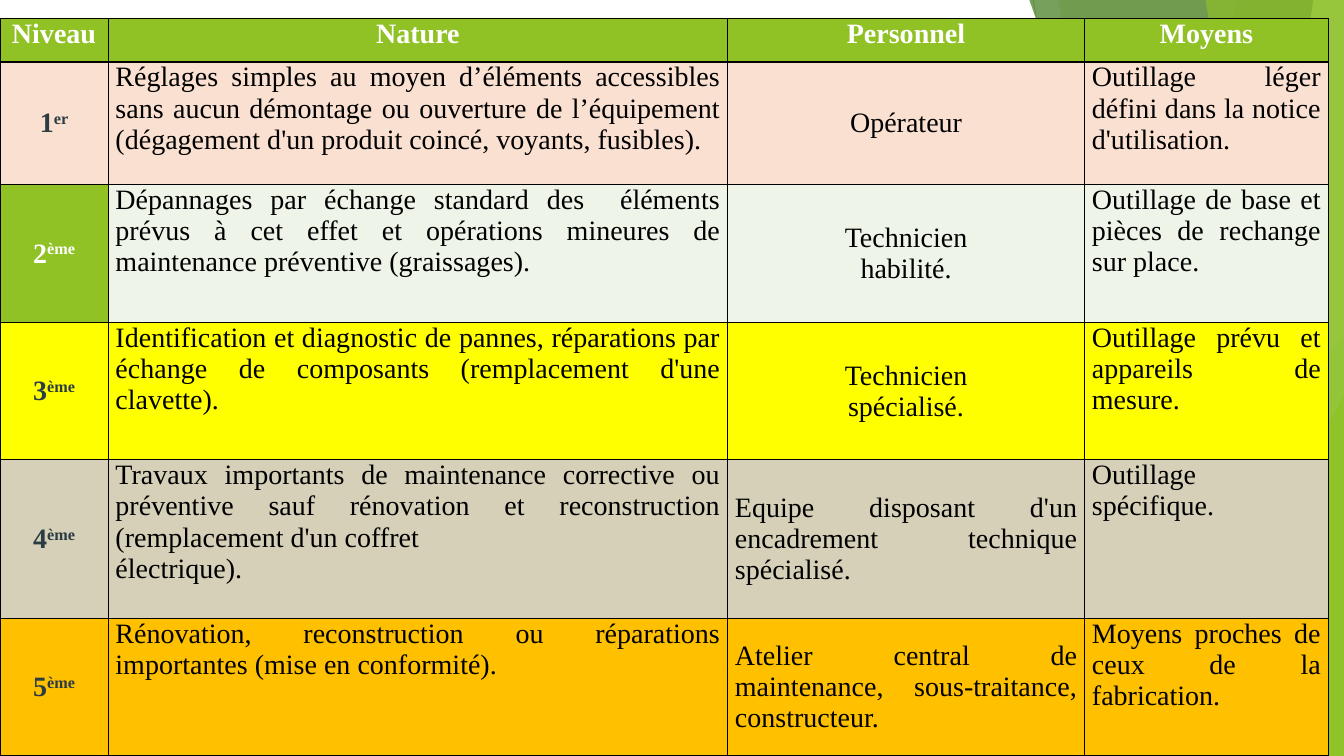
from lxml import etree
from pptx import Presentation, util as u
from pptx.dml.color import RGBColor
from pptx.enum import shapes, text
from pptx.oxml import ns

PX = 9525
WIDTH, HEIGHT = 1280, 720
FONT = "Times New Roman"
GREEN, WHITE, BLACK, SLATE = "90C226", "FFFFFF", "000000", "2C3C43"
CENTER, JUSTIFY = text.PP_ALIGN.CENTER, text.PP_ALIGN.JUSTIFY

COLUMN_WIDTHS = [103, 590, 340, 232]
ROW_HEIGHTS = [41, 117, 131, 131, 151, 131]
HEADINGS = ["Niveau", "Nature", "Personnel", "Moyens"]

# ordinal suffix, level colour, level fill, row fill, staff alignment, nature, staff, means
LEVELS = [
    ("er", SLATE, "FAE0D1", "FAE0D1", CENTER,
     "Réglages simples au moyen d’éléments accessibles sans aucun démontage ou ouverture "
     "de l’équipement (dégagement d'un produit coincé, voyants, fusibles).",
     "Opérateur",
     "Outillage léger défini dans la notice d'utilisation."),
    ("ème", WHITE, GREEN, "EEF4E8", CENTER,
     "Dépannages par échange standard des  éléments prévus à cet effet et opérations "
     "mineures de maintenance préventive (graissages).",
     "Technicien\nhabilité.",
     "Outillage de base et pièces de rechange sur place."),
    ("ème", SLATE, "FFFF00", "FFFF00", CENTER,
     "Identification et diagnostic de pannes, réparations par échange de composants "
     "(remplacement d'une clavette).",
     "Technicien\nspécialisé.",
     "Outillage prévu et appareils de mesure."),
    ("ème", SLATE, "D6D0B8", "D6D0B8", JUSTIFY,
     "Travaux importants de maintenance corrective ou préventive sauf rénovation et "
     "reconstruction (remplacement d'un coffret\nélectrique).",
     "Equipe disposant d'un encadrement technique spécialisé.",
     "Outillage\nspécifique."),
    ("ème", SLATE, "FFC000", "FFC000", JUSTIFY,
     "Rénovation, reconstruction ou réparations importantes (mise en conformité).",
     "Atelier central de maintenance, sous-traitance, constructeur.",
     "Moyens proches de ceux de la fabrication."),
]


def px(length):
    return u.Emu(length * PX)


def rgb(hex_color):
    return RGBColor.from_string(hex_color)


def paint(shape, color, opacity):
    """Give a shape a see-through fill without outline or shadow."""
    shape.shadow.inherit = False
    shape.line.fill.background()
    shape.fill.solid()
    shape.fill.fore_color.rgb = rgb(color)
    srgb = shape.fill._xPr.find(".//" + ns.qn("a:srgbClr"))
    etree.SubElement(srgb, ns.qn("a:alpha"), val=str(opacity * 1000))


def add_ray(slide, start, end, color):
    ray = slide.shapes.add_connector(
        shapes.MSO_CONNECTOR.STRAIGHT, *(px(v) for v in start + end))
    ray.line.color.rgb = rgb(color)
    ray.line.width = u.Pt(0.75)
    etree.SubElement(ray._element.spPr, ns.qn("a:effectLst"))


def add_band(slide, top_x, bottom_x, color, opacity):
    """Fill the area between a slanted edge and the right side of the slide."""
    builder = slide.shapes.build_freeform(px(top_x), px(-1))
    builder.add_line_segments([(px(x), px(y)) for x, y in (
        (WIDTH, -1), (WIDTH, HEIGHT), (bottom_x, HEIGHT))], close=True)
    paint(builder.convert_to_shape(), color, opacity)


def add_corner(slide, left, width, height, apex, color, opacity):
    """Stand a triangle on the bottom edge of the slide."""
    corner = slide.shapes.add_shape(
        shapes.MSO_SHAPE.ISOSCELES_TRIANGLE,
        px(left), px(HEIGHT - height), px(width), px(height))
    corner.adjustments[0] = apex
    paint(corner, color, opacity)


def add_decor(slide):
    add_ray(slide, (984, 0), (1112, HEIGHT), "BFBFBF")
    add_ray(slide, (WIDTH, 387), (780, HEIGHT), "D9D9D9")
    add_band(slide, 1179, 964, GREEN, 30)
    add_band(slide, 1008, 1136, GREEN, 20)
    add_corner(slide, 938, 342, 400, 1, "54A021", 72)
    add_band(slide, 980, 1239, "3F7819", 70)
    add_band(slide, 1251, 1144, "C0E474", 70)
    add_band(slide, 1148, 1265, GREEN, 65)
    add_corner(slide, 1089, 191, 343, 1, GREEN, 80)
    add_corner(slide, 0, 47, 299, 0, GREEN, 85)


def add_borders(cell):
    properties = cell._tc.get_or_add_tcPr()
    for side in ("lnL", "lnR", "lnT", "lnB"):
        border = etree.SubElement(properties, ns.qn("a:" + side), w=str(u.Pt(1)))
        fill = etree.SubElement(border, ns.qn("a:solidFill"))
        etree.SubElement(fill, ns.qn("a:srgbClr"), val=BLACK)


def fill_cell(cell, content, fill, align, color=BLACK, bold=False, middle=False):
    add_borders(cell)
    cell.fill.solid()
    cell.fill.fore_color.rgb = rgb(fill)
    cell.margin_left = cell.margin_right = px(7)
    cell.margin_top = cell.margin_bottom = 0
    cell.vertical_anchor = text.MSO_ANCHOR.MIDDLE if middle else text.MSO_ANCHOR.TOP
    cell.text_frame.text = content
    for paragraph in cell.text_frame.paragraphs:
        paragraph.alignment = align
        for run in paragraph.runs:
            format_run(run, color, bold)


def format_run(run, color, bold):
    run.font.name = FONT
    run.font.size = u.Pt(20)
    run.font.bold = bold
    run.font.color.rgb = rgb(color)


def add_ordinal(cell, suffix, color):
    """Append a raised ordinal ending to the level number."""
    ending = cell.text_frame.paragraphs[0].add_run()
    ending.text = suffix
    format_run(ending, color, True)
    ending._r.get_or_add_rPr().set("baseline", "30000")


def add_levels_table(slide):
    levels = slide.shapes.add_table(
        len(ROW_HEIGHTS), len(COLUMN_WIDTHS), 0, px(18),
        px(sum(COLUMN_WIDTHS)), px(sum(ROW_HEIGHTS))).table
    levels.horz_banding = False
    for column, width in zip(levels.columns, COLUMN_WIDTHS):
        column.width = px(width)
    for row, height in zip(levels.rows, ROW_HEIGHTS):
        row.height = px(height)

    for cell, heading in zip(levels.rows[0].cells, HEADINGS):
        fill_cell(cell, heading, GREEN, CENTER, WHITE, bold=True)
    for number, level in enumerate(LEVELS, 1):
        suffix, color, level_fill, row_fill, staff_align, nature, staff, means = level
        level_cell, nature_cell, staff_cell, means_cell = levels.rows[number].cells
        fill_cell(level_cell, str(number), level_fill, CENTER, color, bold=True, middle=True)
        add_ordinal(level_cell, suffix, color)
        fill_cell(nature_cell, nature, row_fill, JUSTIFY)
        fill_cell(staff_cell, staff, row_fill, staff_align, middle=True)
        fill_cell(means_cell, means, row_fill, JUSTIFY)


def main():
    deck = Presentation()
    deck.slide_width, deck.slide_height = px(WIDTH), px(HEIGHT)
    slide = deck.slides.add_slide(deck.slide_layouts[6])
    add_decor(slide)
    add_levels_table(slide)
    deck.save("out.pptx")


if __name__ == "__main__":
    main()
